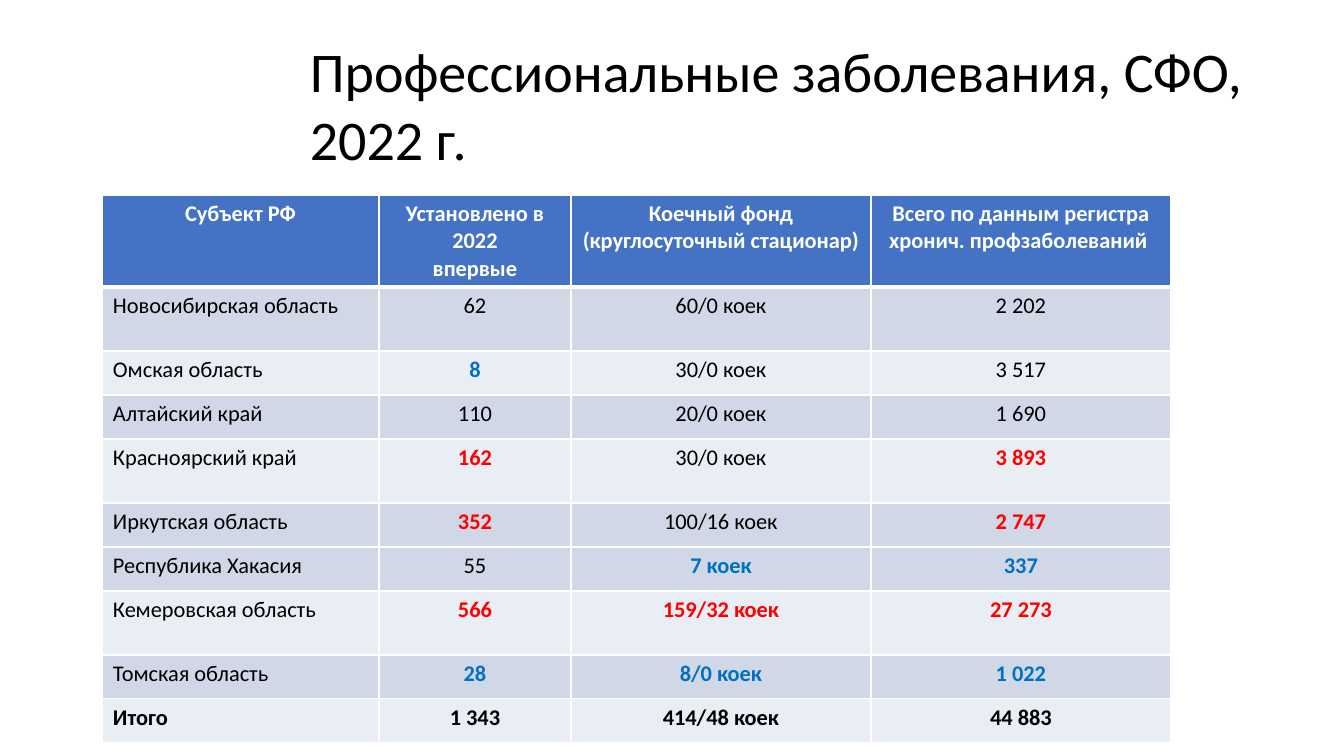
from lxml import etree
from pptx import Presentation
from pptx.dml.color import RGBColor
from pptx.enum.text import PP_ALIGN
from pptx.oxml.ns import qn
from pptx.util import Emu, Pt

LEFT, CENTER = PP_ALIGN.LEFT, PP_ALIGN.CENTER
SCALE = 914400 / 100.8
THEME = {
    "font": "Calibri", "title": 40, "body": 16,
    "white": "FFFFFF", "black": "000000", "red": "FF0000", "blue": "0070C0",
    "header": "4472C4", "dark": "D0D8E8", "light": "E9EDF4",
}


def px(n):
    return Emu(round(n * SCALE))


def write(tf, text, size="body", color="black", bold=False, align=LEFT):
    tf.word_wrap = True
    for i, line in enumerate(text.split("\n")):
        p = tf.add_paragraph() if i else tf.paragraphs[0]
        p.alignment = align
        r = p.add_run()
        r.text = line
        r.font.name = THEME["font"]
        r.font.size = Pt(THEME[size])
        r.font.bold = bold
        r.font.color.rgb = RGBColor.from_string(THEME[color])


HEADINGS = [
    "Субъект РФ",
    "Установлено в 2022\nвпервые",
    "Коечный фонд\n(круглосуточный стационар)",
    "Всего по данным регистра хронич. профзаболеваний ",
]
REGIONS = [
    (64, "dark", "Новосибирская область", "62", "60/0 коек", "2 202"),
    (44, "light", "Омская область", "8", "30/0 коек", "3 517"),
    (44, "dark", "Алтайский край", "110", "20/0 коек", "1 690"),
    (64, "light", "Красноярский край", "162", "30/0 коек", "3 893"),
    (44, "dark", "Иркутская область", "352", "100/16 коек", "2 747"),
    (44, "dark", "Республика Хакасия", "55", "7 коек", "337"),
    (64, "light", "Кемеровская область", "566", "159/32 коек", "27 273"),
    (44, "dark", "Томская область", "28", "8/0 коек", "1 022"),
    (44, "light", "Итого", "1 343", "414/48 коек", "44 883"),
]
HIGHLIGHTS = {
    "red": {"162", "3 893", "352", "2 747", "566", "159/32 коек", "27 273"},
    "blue": {"8", "7 коек", "337", "28", "8/0 коек", "1 022"},
}
ROWS = [(91, "header", *HEADINGS), *REGIONS]
COLUMNS = [277, 192, 300, 300]
TOTAL = len(ROWS) - 1

prs = Presentation()
prs.slide_width, prs.slide_height = px(1344), px(756)
s = prs.slides.add_slide(prs.slide_layouts[6])

heights = [row[0] for row in ROWS]
table = s.shapes.add_table(
    len(ROWS), len(COLUMNS), px(102), px(195), px(sum(COLUMNS)), px(sum(heights))
).table
for column, width in zip(table.columns, COLUMNS):
    column.width = px(width)

for i, (height, fill, *texts) in enumerate(ROWS):
    table.rows[i].height = px(height)
    for j, text in enumerate(texts):
        cell = table.cell(i, j)
        cell.margin_left = cell.margin_right = px(11)
        cell.margin_top = cell.margin_bottom = px(5)
        color = "black" if i else "white"
        for name, values in HIGHLIGHTS.items():
            if text in values:
                color = name
        write(cell.text_frame, text, color=color,
              bold=color != "black" or i == TOTAL,
              align=CENTER if i == 0 or j else LEFT)

        tcPr = cell._tc.get_or_add_tcPr()
        for side in ("lnL", "lnR", "lnT", "lnB"):
            thick = (i, side) in ((0, "lnB"), (1, "lnT"))
            ln = etree.SubElement(tcPr, qn(f"a:{side}"), w=str(Pt(3 if thick else 1)))
            solid = etree.SubElement(ln, qn("a:solidFill"))
            etree.SubElement(solid, qn("a:srgbClr"), val=THEME["white"])
        cell.fill.solid()
        cell.fill.fore_color.rgb = RGBColor.from_string(THEME[fill])

title = s.shapes.add_textbox(px(300), px(32), px(1031), px(146))
write(title.text_frame, "Профессиональные заболевания, СФО, 2022 г.", size="title")

prs.save("out.pptx")
